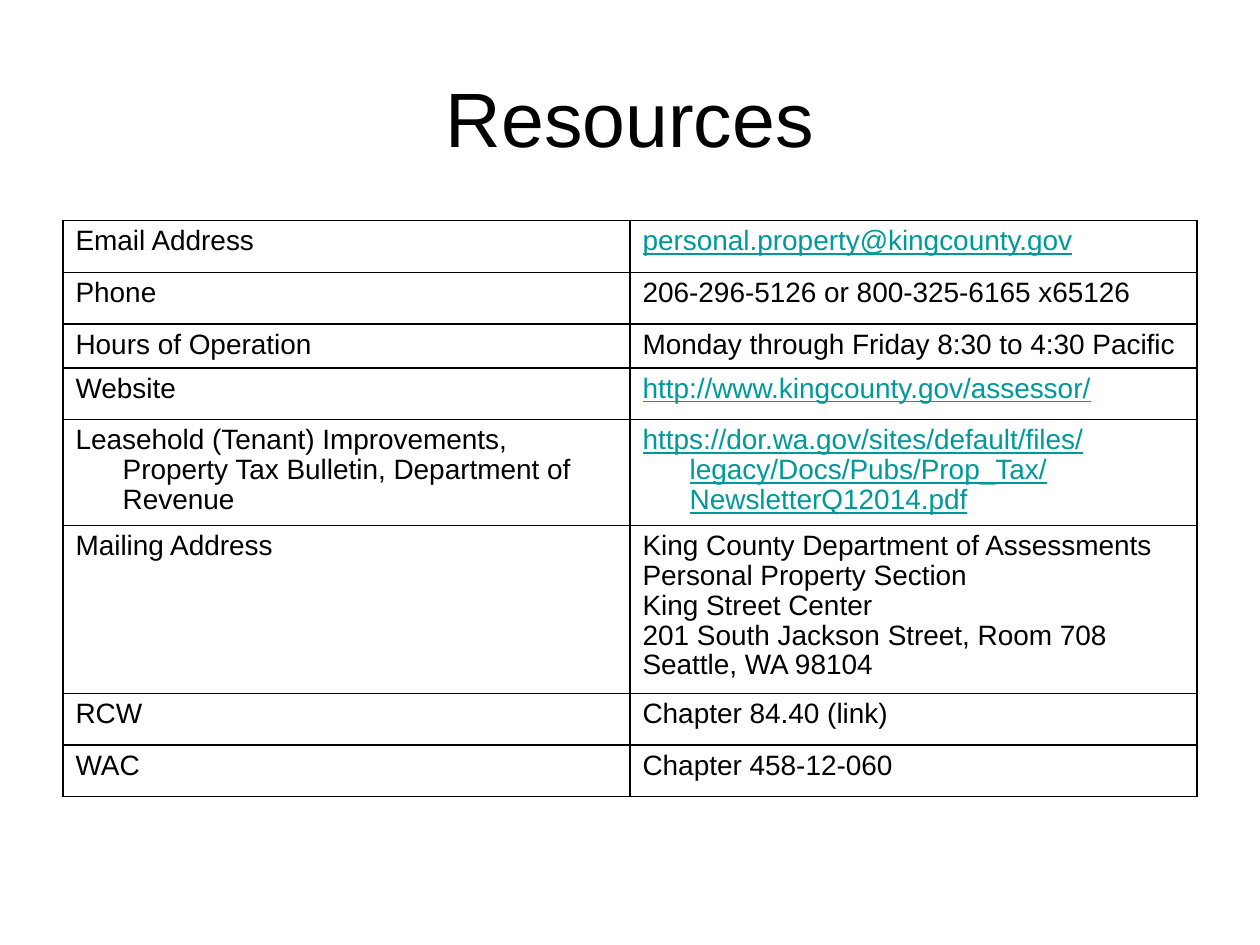
"""Build the Resources slide: a title above a two-column contact table."""
import lxml.etree
import pptx
import pptx.dml.color
import pptx.enum.text
import pptx.oxml.ns
import pptx.util

Cm, Pt = pptx.util.Cm, pptx.util.Pt
RGB = pptx.dml.color.RGBColor.from_string

TITLE = "Resources"
ROWS = [
    ("Email Address", ["personal.property@kingcounty.gov"], 1.04),
    ("Phone", ["206-296-5126 or 800-325-6165 x65126"], 1.04),
    ("Hours of Operation", ["Monday through Friday 8:30 to 4:30 Pacific"], 0.89),
    ("Website", ["http://www.kingcounty.gov/assessor/"], 1.04),
    ("Leasehold (Tenant) Improvements, Property Tax Bulletin, Department of Revenue",
     ["https://dor.wa.gov/sites/default/files/legacy/Docs/Pubs/Prop_Tax/NewsletterQ12014.pdf"],
     2.13),
    ("Mailing Address",
     ["King County Department of Assessments", "Personal Property Section",
      "King Street Center", "201 South Jackson Street, Room 708",
      "Seattle, WA 98104"], 3.39),
    ("RCW", ["Chapter 84.40 (link)"], 1.04),
    ("WAC", ["Chapter 458-12-060"], 1.04),
]
THEME = {
    "ink": "000000",
    "link": "009999",
    "head": {"name": "Arial", "size": Pt(44), "bold": False},
    "text": {"name": "Arial", "size": Pt(16), "bold": False},
    "rule": Pt(1),
    "hang": Cm(0.95),
    "lead": 0.96,
}
HEAD = {"left": Cm(1.27), "top": Cm(0.76), "width": Cm(22.86), "height": Cm(3.18)}
GRID = {"left": Cm(1.27), "top": Cm(4.45), "width": Cm(22.86),
        "height": Cm(sum(row[2] for row in ROWS))}
FLAGS = {"first_row": False, "horz_banding": False}


def assign(item, values):
    for key, value in values.items():
        setattr(item, key, value)


def style(font, face, ink):
    assign(font, face)
    font.color.rgb = RGB(ink)


def border(cell):
    props = cell._tc.get_or_add_tcPr()
    tag = pptx.oxml.ns.qn
    for place, side in enumerate(("a:lnL", "a:lnR", "a:lnT", "a:lnB")):
        line = lxml.etree.Element(tag(side), w=str(THEME["rule"]))
        fill = lxml.etree.SubElement(line, tag("a:solidFill"))
        lxml.etree.SubElement(fill, tag("a:srgbClr"), val=THEME["ink"])
        props.insert(place, line)


def write(cell, lines):
    cell.fill.background()
    border(cell)
    cell.text = "\n".join(lines)
    for para in cell.text_frame.paragraphs:
        para.line_spacing = THEME["lead"]
        props = para._p.get_or_add_pPr()
        props.set("marL", str(THEME["hang"]))
        props.set("indent", str(-THEME["hang"]))
        for run in para.runs:
            link = "@" in run.text or "://" in run.text
            style(run.font, THEME["text"], THEME["link" if link else "ink"])
            run.font.underline = link


def main():
    deck = pptx.Presentation()
    assign(deck, {"slide_width": Cm(25.4), "slide_height": Cm(19.05)})
    slide = deck.slides.add_slide(deck.slide_layouts[5])
    head = slide.shapes.title
    assign(head, HEAD)
    head.text = TITLE
    head.text_frame.vertical_anchor = pptx.enum.text.MSO_ANCHOR.MIDDLE
    para = head.text_frame.paragraphs[0]
    para.alignment = pptx.enum.text.PP_ALIGN.CENTER
    style(para.runs[0].font, THEME["head"], THEME["ink"])

    table = slide.shapes.add_table(len(ROWS), 2, **GRID).table
    assign(table, FLAGS)
    for row, (label, lines, height) in zip(table.rows, ROWS):
        row.height = Cm(height)
        write(row.cells[0], [label])
        write(row.cells[1], lines)
    deck.save("out.pptx")


if __name__ == "__main__":
    main()
